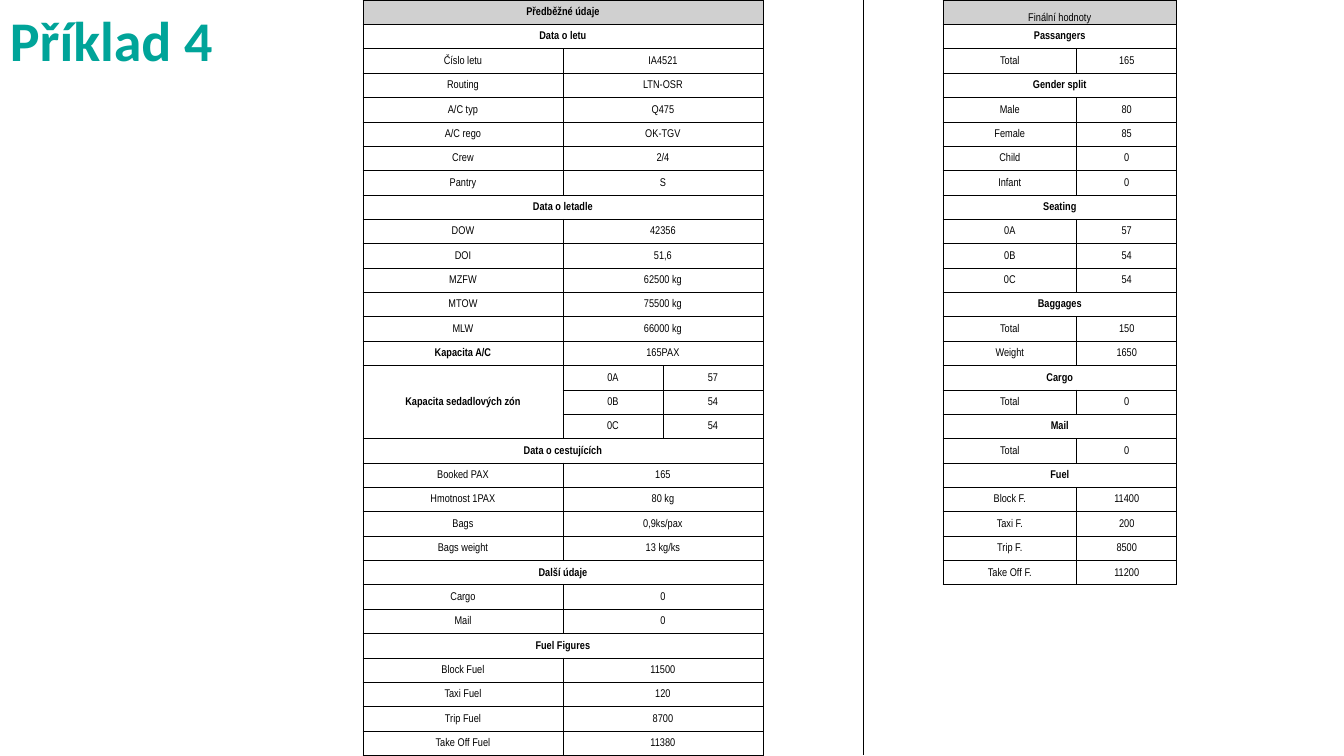
import lxml.etree
import pptx
import pptx.dml.color
import pptx.enum.text
import pptx.oxml.ns
import pptx.util

HEADING = "Příklad 4"
PRELIMINARY = [
    ("Předběžné údaje",),
    ("Data o letu",),
    ("Číslo letu", "IA4521"),
    ("Routing", "LTN-OSR"),
    ("A/C typ", "Q475"),
    ("A/C rego", "OK-TGV"),
    ("Crew", "2/4"),
    ("Pantry", "S"),
    ("Data o letadle",),
    ("DOW", "42356"),
    ("DOI", "51,6"),
    ("MZFW", "62500 kg"),
    ("MTOW", "75500 kg"),
    ("MLW", "66000 kg"),
    ("Kapacita A/C", "165PAX"),
    ("Kapacita sedadlových zón", "0A", "57"),
    ("", "0B", "54"),
    ("", "0C", "54"),
    ("Data o cestujících",),
    ("Booked PAX", "165"),
    ("Hmotnost 1PAX", "80 kg"),
    ("Bags", "0,9ks/pax"),
    ("Bags weight", "13 kg/ks"),
    ("Další údaje",),
    ("Cargo", "0"),
    ("Mail", "0"),
    ("Fuel Figures",),
    ("Block Fuel", "11500"),
    ("Taxi Fuel", "120"),
    ("Trip Fuel", "8700"),
    ("Take Off Fuel", "11380"),
]
FINAL = [
    ("Finální hodnoty",),
    ("Passangers",),
    ("Total", "165"),
    ("Gender split",),
    ("Male", "80"),
    ("Female", "85"),
    ("Child", "0"),
    ("Infant", "0"),
    ("Seating",),
    ("0A", "57"),
    ("0B", "54"),
    ("0C", "54"),
    ("Baggages",),
    ("Total", "150"),
    ("Weight", "1650"),
    ("Cargo",),
    ("Total", "0"),
    ("Mail",),
    ("Total", "0"),
    ("Fuel",),
    ("Block F.", "11400"),
    ("Taxi F.", "200"),
    ("Trip F.", "8500"),
    ("Take Off F.", "11200"),
]
BOLD_LABELS = {"Kapacita A/C", "Kapacita sedadlových zón"}
ZONE_ROWS = 3
COLUMN_WIDTHS = [200, 100, 100, 100, 80, 134, 100]
PRELIMINARY_COLUMNS = (0, 3)
FINAL_COLUMNS = (5, 7)

TEAL = pptx.dml.color.RGBColor(0x00, 0xA4, 0x99)
BLACK = pptx.dml.color.RGBColor(0x00, 0x00, 0x00)
GREY = pptx.dml.color.RGBColor(0xD0, 0xD0, 0xD0)
NO_STYLE_NO_GRID = "{2D5ABB26-0587-4C30-8999-92F81FD0307C}"
CENTER = pptx.enum.text.PP_ALIGN.CENTER
LEFT = pptx.enum.text.PP_ALIGN.LEFT
MIDDLE = pptx.enum.text.MSO_ANCHOR.MIDDLE
BOTTOM = pptx.enum.text.MSO_ANCHOR.BOTTOM
SLIDE_WIDTH, SLIDE_HEIGHT = 1344, 756
qn = pptx.oxml.ns.qn


def px(length):
    return round(length * 914400 / 100.8)


def write(frame, text, *, size=8, font="Arial Narrow", color=BLACK, bold=False, align=CENTER):
    paragraph = frame.paragraphs[0]
    paragraph.alignment = align
    run = paragraph.add_run()
    run.text = text
    run.font.size = pptx.util.Pt(size)
    run.font.name = font
    run.font.bold = bold
    run.font.color.rgb = color
    return paragraph


def add_edge(cell, side):
    edge = lxml.etree.SubElement(cell._tc.get_or_add_tcPr(), qn("a:ln" + side), w=str(pptx.util.Pt(0.5)))
    fill = lxml.etree.SubElement(edge, qn("a:solidFill"))
    lxml.etree.SubElement(fill, qn("a:srgbClr"), val=str(BLACK))


def place(table, text, top, left, bottom, right, *, bold, anchor=MIDDLE, fill=None):
    for row in range(top, bottom):
        for column in range(left, right):
            cell = table.cell(row, column)
            for side in "LRTB":
                add_edge(cell, side)
            if fill is not None:
                cell.fill.solid()
                cell.fill.fore_color.rgb = fill
    first = table.cell(top, left)
    if (bottom - top) * (right - left) > 1:
        first.merge(table.cell(bottom - 1, right - 1))
    first.vertical_anchor = anchor
    write(first.text_frame, text, bold=bold)


def fill_block(table, entries, columns, header_bold, header_anchor):
    start, end = columns
    for row, entry in enumerate(entries):
        if row == 0:
            place(table, entry[0], row, start, row + 1, end, bold=header_bold, anchor=header_anchor, fill=GREY)
            continue
        for offset, text in enumerate(entry):
            if not text:
                continue
            right = end if offset == len(entry) - 1 else start + offset + 1
            height = ZONE_ROWS if len(entry) == 3 and offset == 0 else 1
            bold = len(entry) == 1 or text in BOLD_LABELS
            place(table, text, row, start + offset, row + height, right, bold=bold)


def draw_gutter(table):
    before, after = PRELIMINARY_COLUMNS[1], FINAL_COLUMNS[0] - 1
    for row in range(len(PRELIMINARY)):
        add_edge(table.cell(row, before), "L")
        if row < len(FINAL):
            add_edge(table.cell(row, after), "R")


def main():
    deck = pptx.Presentation()
    deck.slide_width, deck.slide_height = px(SLIDE_WIDTH), px(SLIDE_HEIGHT)
    slide = deck.slides.add_slide(deck.slide_layouts[6])

    heading = slide.shapes.add_textbox(px(0), px(-1), px(1301), px(80)).text_frame
    heading.word_wrap = True
    heading.vertical_anchor = BOTTOM
    write(heading, HEADING, size=40, font="Calibri", color=TEAL, bold=True, align=LEFT).line_spacing = 0.9

    flight = slide.shapes.add_table(
        len(PRELIMINARY), len(COLUMN_WIDTHS), px(363), px(0), px(sum(COLUMN_WIDTHS)), px(SLIDE_HEIGHT)
    ).table
    flight.first_row = flight.horz_banding = False
    flight._tbl.tblPr.find(qn("a:tableStyleId")).text = NO_STYLE_NO_GRID
    for column, width in zip(flight.columns, COLUMN_WIDTHS):
        column.width = px(width)
    for row in flight.rows:
        row.height = px(SLIDE_HEIGHT / len(PRELIMINARY))
    for cell in flight.iter_cells():
        cell.margin_left = cell.margin_right = cell.margin_top = px(1)
        cell.margin_bottom = 0
        lxml.etree.SubElement(cell.text_frame.paragraphs[0]._p, qn("a:endParaRPr"), sz="800")

    fill_block(flight, PRELIMINARY, PRELIMINARY_COLUMNS, True, MIDDLE)
    fill_block(flight, FINAL, FINAL_COLUMNS, False, BOTTOM)
    draw_gutter(flight)
    for cell in flight.iter_cells():
        if cell.fill.type is None:
            cell.fill.background()
    deck.save("out.pptx")


if __name__ == "__main__":
    main()
